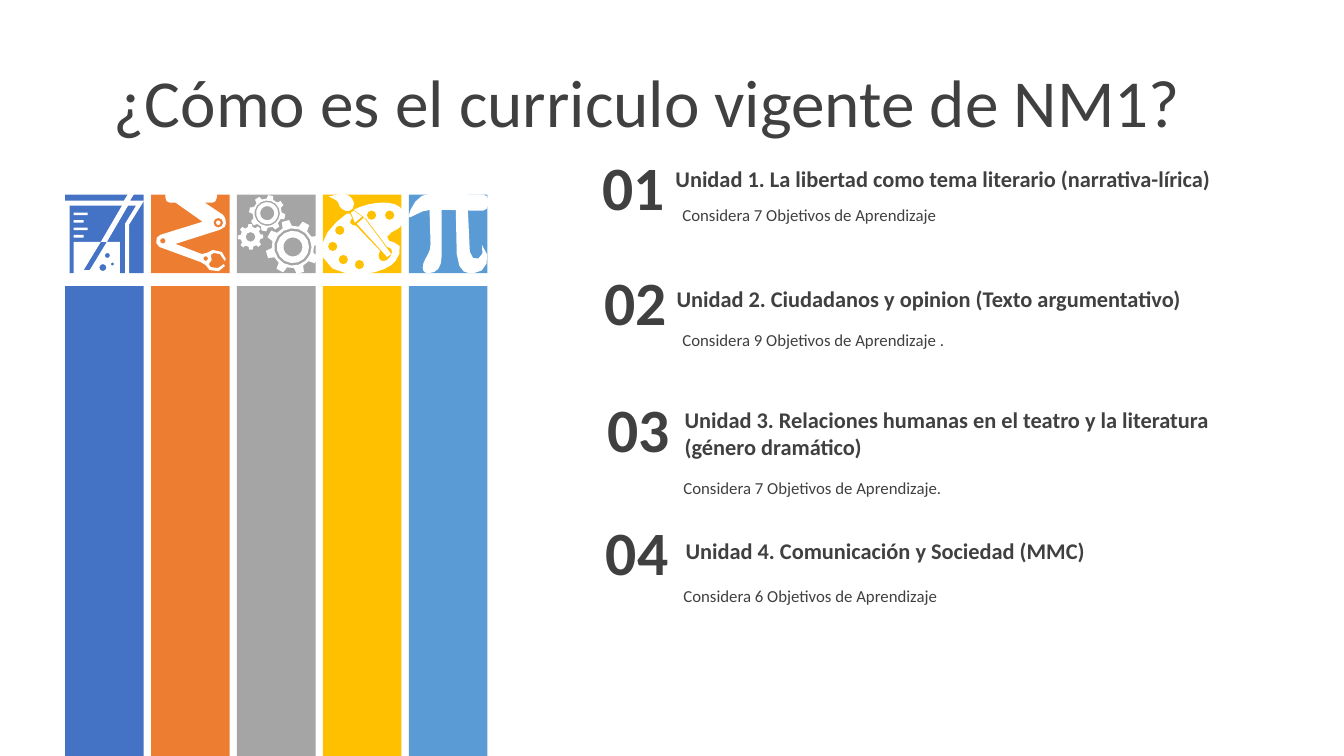
from dataclasses import dataclass
from math import cos, dist, radians, sin

from pptx import Presentation
from pptx.dml.color import RGBColor
from pptx.enum.shapes import MSO_SHAPE
from pptx.enum.text import MSO_ANCHOR, MSO_AUTO_SIZE, PP_ALIGN
from pptx.util import Inches, Pt

# Grid: 1333 columns by 750 rows of square cells
CELL = Inches(0.01)
COLS, ROWS = 1333, 750

Point = tuple[float, float]
Loop = list[Point]


@dataclass(frozen=True)
class Theme:
    font: str = "Calibri"
    ink: str = "404040"
    paper: str = "FFFFFF"
    bars: tuple[str, ...] = ("4472C4", "ED7D31", "A5A5A5", "FFC000", "5B9BD5")
    title: int = 48
    number: int = 44
    head: int = 16
    note: int = 12


@dataclass(frozen=True)
class Box:
    col: float
    row: float
    wide: float
    high: float


@dataclass(frozen=True)
class Unit:
    number: str
    spot: Box
    head: str
    head_box: Box
    note: str
    note_box: Box


@dataclass(frozen=True)
class Gear:
    col: float
    row: float
    tip: float
    root: float
    turn: float
    rings: tuple[float, ...]


THEME = Theme()

UNITS = [
    Unit("01", Box(576, 143, 105, 84),
         "Unidad 1. La libertad como tema literario (narrativa-lírica)", Box(658, 159, 567, 37),
         "Considera 7 Objetivos de Aprendizaje", Box(667, 198, 480, 30)),
    Unit("02", Box(578, 257, 105, 84),
         "Unidad 2. Ciudadanos y opinion (Texto argumentativo)", Box(659, 278, 575, 37),
         "Considera 9 Objetivos de Aprendizaje .", Box(667, 322, 493, 30)),
    Unit("03", Box(581, 383, 105, 84),
         "Unidad 3. Relaciones humanas en el teatro y la literatura (género dramático)",
         Box(667, 398, 558, 64),
         "Considera 7 Objetivos de Aprendizaje.", Box(668, 469, 493, 30)),
    Unit("04", Box(579, 505, 106, 84),
         "Unidad 4. Comunicación y Sociedad (MMC)", Box(668, 528, 585, 37),
         "Considera 6 Objetivos de Aprendizaje", Box(668, 576, 493, 30)),
]

GEARS = [
    Gear(290.5, 245, 27, 21, 164, (18.5, 16, 9.5)),
    Gear(265, 211.5, 18, 14.5, 146, (12.6, 11, 7)),
    Gear(248.5, 235, 12.7, 10, 178, (4.8,)),
]


# Outlines: points in grid cells; "c" bends through the next three points
def trace(text: str) -> Loop:
    loop: Loop = []
    words = iter(text.split())
    for word in words:
        if word != "c":
            loop.append(pair(word))
            continue
        a, (b, c, d) = loop[-1], (pair(next(words)) for _ in range(3))
        span = dist(a, d)
        steps = 1 if span < 4 else 2 if span < 9 else 4
        for step in range(1, steps + 1):
            t = step / steps
            u = 1 - t
            loop.append(tuple(u**3 * p + 3 * u * u * t * q + 3 * u * t * t * r + t**3 * s
                              for p, q, r, s in zip(a, b, c, d)))
    return loop


def pair(word: str) -> Point:
    x, y = word.split(",")
    return float(x), float(y)


def polar(x: float, y: float, reach: float, turn: float) -> Point:
    return x + reach * cos(radians(turn)), y + reach * sin(radians(turn))


def ring(x: float, y: float, reach: float) -> Loop:
    return [polar(x, y, reach, turn) for turn in range(0, 360, 45 if reach < 6 else 24)]


def cog(gear: Gear) -> list[Loop]:
    edge = [polar(gear.col, gear.row, reach, gear.turn + 45 * tooth + lean)
            for tooth in range(8)
            for reach, lean in ((gear.root, -13), (gear.tip, -8), (gear.tip, 8), (gear.root, 13))]
    return [edge] + [ring(gear.col, gear.row, reach) for reach in gear.rings]


def block(x: float, y: float, wide: float, high: float) -> Loop:
    return [(x, y), (x + wide, y), (x + wide, y + high), (x, y + high)]


BEAKER = [
    trace("137,176 143,176 129,199 143,199 128,223 128,282 64,282 64,199 123,199"),
    trace("113,204 69,204 69,277 124,277 124,222 135,204 127,204 106,240 100,240 121,204"),
    trace("73,240 100,240 83,268 89,268 106,240 119,240 119,273 73,273"),
    ring(102, 265.5, 3.5), ring(111.5, 262, 1.5), ring(106.5, 253.5, 2.5),
] + [block(73, 211 + 7.4 * n, (14, 10)[n % 2], 2.6) for n in range(4)]

ROBOT = [
    trace("164,192 215,192 215,196 c 215,199 213,201 211,201 203,201 221,213 "
          "c 224,216 225,221 223,225 218,228 174,242 200,252 205,251 211,248 220,250 "
          "224,257 223,259 218,252 212,251 209,253 210,258 207,262 209,265 216,266 222,262 "
          "223,264 217,269 208,268 204,263 199,260 158,245 "
          "155,241 c 154,237 156,234 159,233 201,220 174,201 "
          "168,201 c 166,201 164,199 164,196"),
    ring(204, 256.5, 2.3), ring(161.5, 239, 2.7), ring(216.5, 221, 4.8), ring(216.5, 221, 2.3),
]

PALETTE = [
    trace("380,201 c 389,201 397,203 400,210 c 408,228 385,228 384,235 "
          "c 382,243 402,237 396,252 c 392,262 386,266 372,270 c 359,274 328,275 320,255 "
          "c 314,238 331,221 344,212 347,212 349,216 "
          "347,221 c 348,223 351,224 353,224 377,249 "
          "c 375,252 375,256 377,258 c 379,260 384,259 386,256 c 389,253 390,248 387,246 "
          "384,245 363,217 351,208 c 359,204 370,201 380,201"),
    trace("361,216 388,252 384,255 354,222"),
    trace("351,209 359,215 352,221 348,211"),
    trace("339,192 343,193 c 348,194 351,199 351,202 "
          "c 351,206 350,208 347,209 c 344,210 340,209 337,205 c 335,199 335,199 326,195"),
] + [ring(x, y, 4.7) for x, y in
     ((356.5, 262.5), (340.5, 257.5), (330, 244.5), (337, 228.5), (368.5, 213.5), (386.5, 213.5))]

PI = [
    [trace("484,198 484,204 c 484,206 482,209 479,209 c 455,209 449,208 428,208 "
           "c 416,208 405,219 405,215 c 407,206 414,192 427,192 479,193 "
           "c 482,193 484,195 484,198")],
    [trace("425,271 c 420,271 418,268 420,261 c 423,253 427,251 427,242 "
           "426,207 438,207 438,254 c 438,266 433,271 425,271")],
    [trace("470,271 c 464,271 455,273 453,252 452,207 464,207 466,250 "
           "c 468,263 483,256 478,243 c 489,255 482,271 470,271")],
]

ICONS = [BEAKER, ROBOT, PALETTE, *PI, [loop for gear in GEARS for loop in cog(gear)]]


# Drawing
def paint(shape, tint: str) -> None:
    shape.shadow.inherit = False
    shape.fill.solid()
    shape.fill.fore_color.rgb = RGBColor.from_string(tint)
    shape.line.fill.background()


def place(box: Box) -> list[int]:
    return [round(n * CELL) for n in (box.col, box.row, box.wide, box.high)]


def draw_bar(slide, box: Box, tint: str) -> None:
    paint(slide.shapes.add_shape(MSO_SHAPE.RECTANGLE, *place(box)), tint)


def draw_icon(slide, loops: list[Loop]) -> None:
    spots = [[(x * CELL, y * CELL) for x, y in loop] for loop in loops]
    pen = slide.shapes.build_freeform(*spots[0][0], scale=1.0)
    for count, loop in enumerate(spots):
        if count:
            pen.move_to(*loop[0])
        pen.add_line_segments(loop[1:], close=True)
    paint(pen.convert_to_shape(), THEME.paper)


def draw_text(slide, text: str, box: Box, size: int, bold: bool = False, side: int = 10,
              align=PP_ALIGN.LEFT, anchor=MSO_ANCHOR.TOP) -> None:
    frame = slide.shapes.add_textbox(*place(box)).text_frame
    frame.word_wrap = True
    frame.auto_size = MSO_AUTO_SIZE.SHAPE_TO_FIT_TEXT
    frame.vertical_anchor = anchor
    frame.margin_left = frame.margin_right = side * CELL
    line = frame.paragraphs[0]
    line.alignment = align
    run = line.add_run()
    run.text = text
    run.font.name, run.font.size, run.font.bold = THEME.font, Pt(size), bold
    run.font.color.rgb = RGBColor.from_string(THEME.ink)


def main() -> None:
    deck = Presentation()
    deck.slide_width, deck.slide_height = COLS * CELL, ROWS * CELL
    slide = deck.slides.add_slide(deck.slide_layouts[6])

    # Title and list of units
    draw_text(slide, "¿Cómo es el curriculo vigente de NM1?", Box(103, 54, 1131, 91),
              THEME.title, anchor=MSO_ANCHOR.MIDDLE)
    for unit in UNITS:
        draw_text(slide, unit.note, unit.note_box, THEME.note)
        draw_text(slide, unit.head, unit.head_box, THEME.head, True, 12)
        draw_text(slide, unit.number, unit.spot, THEME.number, True, 12, PP_ALIGN.CENTER)

    # Tiles, bars and icons
    for rank, tint in enumerate(THEME.bars):
        left = 64.5 + 85.25 * rank
        draw_bar(slide, Box(left, 193, 78, 78), tint)
        draw_bar(slide, Box(left, 284, 78, 466), tint)
    for loops in ICONS:
        draw_icon(slide, loops)

    deck.save("out.pptx")


if __name__ == "__main__":
    main()
